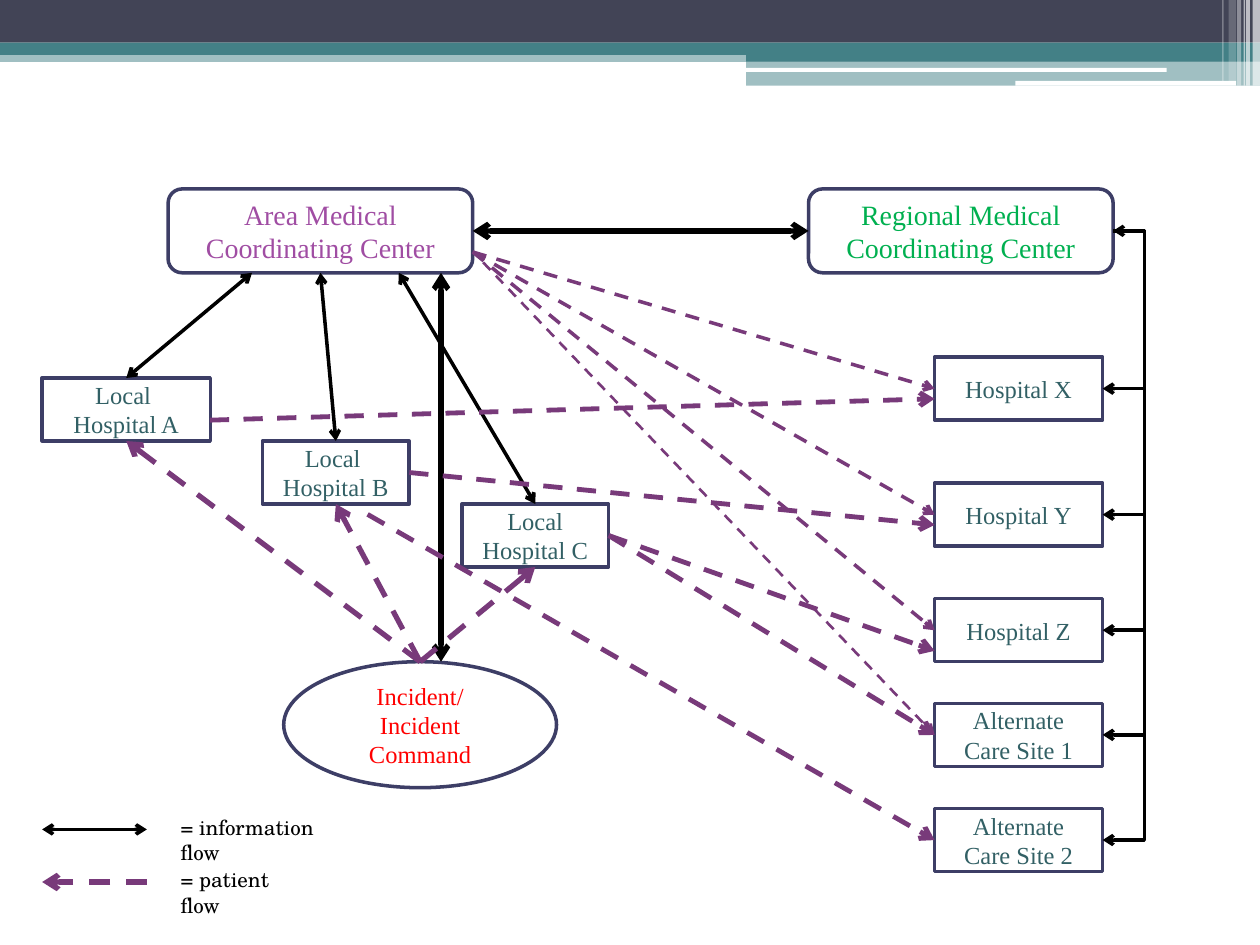
import pptx
import pptx.util
import pptx.dml.color
import pptx.enum.dml
import pptx.enum.shapes
import pptx.enum.text
import pptx.oxml
import pptx.oxml.ns
from lxml import etree

Cm, Pt = pptx.util.Cm, pptx.util.Pt
SHAPE = pptx.enum.shapes.MSO_SHAPE
LINK = pptx.enum.shapes.MSO_CONNECTOR
qn = pptx.oxml.ns.qn

COLORS = {
    "slate": "424456", "teal": "438086", "white": "FFFFFF", "black": "000000",
    "outline": "3D3E66", "hospital": "326065", "incident": "FF0000",
    "area": "A04DA3", "regional": "00B050", "patient": "783A7A",
}
TOP, LEFT, BOTTOM, RIGHT = range(4)

# left, top, width, height, colour, opacity in percent
BANNER = [
    (0, 1.02, 25.4, 0.23, "teal", 50),
    (0, 0, 25.4, 0.86, "slate", 100),
    (0, 0.86, 25.4, 0.25, "teal", 100),
    (15.04, 0.99, 10.36, 0.25, "teal", 100),
    (15.04, 1.22, 10.36, 0.51, "teal", 50),
    (15.01, 1.37, 8.51, 0.08, "white", 100),
    (20.47, 1.63, 4.45, 0.1, "white", 100),
    (25.25, 0, 0.15, 1.73, "white", 65),
    (25.12, 0, 0.08, 1.73, "white", 65),
    (25.07, 0, 0.03, 1.73, "white", 60),
    (24.94, 0, 0.08, 1.73, "white", 40),
    (24.77, 0, 0.15, 1.63, "white", 20),
    (24.64, 0, 0.03, 1.63, "white", 30),
]

# name: text, left, top, width, height, preset, colour, text size
BOX = SHAPE.FLOWCHART_PROCESS
NODES = {
    "A": ("Local \nHospital A", 0.85, 7.62, 3.39, 1.27, BOX, "hospital", 14),
    "B": ("Local \nHospital B", 5.29, 8.89, 2.96, 1.27, BOX, "hospital", 14),
    "C": ("Local Hospital C", 9.31, 10.16, 2.96, 1.27, BOX, "hospital", 14),
    "incident": ("Incident/\nIncident Command", 5.72, 13.34, 5.5, 2.54,
                 SHAPE.OVAL, "incident", 14),
    "area": ("Area Medical Coordinating Center", 3.39, 3.81, 6.14, 1.69,
             SHAPE.ROUNDED_RECTANGLE, "area", 16),
    "regional": ("Regional Medical Coordinating Center", 16.3, 3.81, 6.14, 1.69,
                 SHAPE.ROUNDED_RECTANGLE, "regional", 16),
}
SITES = [("X", "Hospital X", 7.2), ("Y", "Hospital Y", 9.74), ("Z", "Hospital Z", 12.07),
         ("alt1", "Alternate Care Site 1", 14.18), ("alt2", "Alternate Care Site 2", 16.3)]
SITE_LEFT, SITE_WIDTH = 18.84, 3.39
for key, label, top in SITES:
    NODES[key] = (label, SITE_LEFT, top, SITE_WIDTH, 1.27, BOX, "hospital", 14)
BUS_X = 23.07

# An end is (node name, side) or a free point (x, y); then the line width.
AREA_BOTTOM = 5.5
AREA_EXIT = (9.53, 5.08)
INFORMATION = [
    (("A", TOP), (5.08, AREA_BOTTOM), 2),
    ((6.46, AREA_BOTTOM), ("B", TOP), 2),
    (("C", TOP), (8.04, AREA_BOTTOM), 2),
    ((8.89, AREA_BOTTOM), (8.89, 13.34), 3),
    (("regional", LEFT), ("area", RIGHT), 3),
    ((0.85, 16.72), (2.96, 16.72), 2),
]
PATIENT = [
    (("incident", TOP), ("A", BOTTOM), 3),
    (("incident", TOP), ("B", BOTTOM), 3),
    (("incident", TOP), ("C", BOTTOM), 3),
    (AREA_EXIT, ("X", LEFT), 2),
    (AREA_EXIT, ("Y", LEFT), 2),
    (AREA_EXIT, ("Z", LEFT), 2),
    ((9.74, 5.29), ("alt1", LEFT), 1.5),
    ((4.23, 8.47), (SITE_LEFT, 8.04), 2.75),
    (("B", RIGHT), (SITE_LEFT, 10.58), 2.75),
    (("C", RIGHT), (SITE_LEFT, 13.12), 2.75),
    (("C", RIGHT), ("alt1", LEFT), 2.75),
    ((7.41, 10.37), ("alt2", LEFT), 2.75),
    ((2.96, 17.78), (0.85, 17.78), 3),
]
LEGEND = [("= information flow", 16.3, 4.02), ("= patient flow", 17.35, 3.18)]


def rgb(name):
    return pptx.dml.color.RGBColor.from_string(COLORS[name])


def add_text(sp, text, font, size, color, align=None):
    tf = sp.text_frame
    tf.word_wrap = True
    tf.text = text
    for p in tf.paragraphs:
        p.alignment = align
        for r in p.runs:
            r.font.name, r.font.size = font, Pt(size)
            r.font.color.rgb = rgb(color)


def add_shape(s, preset, box, fill):
    sp = s.shapes.add_shape(preset, *map(Cm, box))
    sp.shadow.inherit = False
    sp.fill.solid()
    sp.fill.fore_color.rgb = rgb(fill)
    return sp


def add_band(s, left, top, width, height, color, opacity):
    sp = add_shape(s, SHAPE.RECTANGLE, (left, top, width, height), color)
    sp.line.fill.background()
    if opacity < 100:
        clr = sp.fill._xPr.find(".//" + qn("a:srgbClr"))
        etree.SubElement(clr, qn("a:alpha"), val=str(opacity * 1000))


def add_node(s, text, left, top, width, height, preset, color, size):
    sp = add_shape(s, preset, (left, top, width, height), "white")
    sp.line.color.rgb = rgb("outline")
    sp.line.width = Pt(2)
    sp.text_frame.vertical_anchor = pptx.enum.text.MSO_ANCHOR.MIDDLE
    add_text(sp, text, "Times New Roman", size, color, pptx.enum.text.PP_ALIGN.CENTER)
    return sp


def add_arrow(s, kind, start, end, color, width, both=False):
    c = s.shapes.add_connector(kind, *map(Cm, start + end))
    c.line.color.rgb = rgb(color)
    c.line.width = Pt(width)
    if color == "patient":
        c.line.dash_style = pptx.enum.dml.MSO_LINE.DASH
    ln = c.line._get_or_add_ln()
    for tag in ("a:headEnd", "a:tailEnd") if both else ("a:tailEnd",):
        etree.SubElement(ln, qn(tag), type="arrow")
    etree.SubElement(c._element.spPr, qn("a:effectLst"))
    return c


def add_flow(s, nodes, start, end, color, width, both):
    """Draw a straight arrow, joined to a node at each end that names one."""
    free = [(0, 0) if e[0] in nodes else e for e in (start, end)]
    c = add_arrow(s, LINK.STRAIGHT, *free, color, width, both)
    for e, connect in ((start, c.begin_connect), (end, c.end_connect)):
        if e[0] in nodes:
            connect(nodes[e[0]], e[1])


def add_bus(s):
    """Lead from the regional center down the right margin to every site."""
    _, left, top, width, height = NODES["regional"][:5]
    start = (left + width, top + height / 2)
    end_x = SITE_LEFT + SITE_WIDTH
    bend = (start[0] - BUS_X) / (start[0] - end_x)
    for i, (key, _, site_top) in enumerate(SITES):
        end = (end_x, site_top + NODES[key][4] / 2)
        c = add_arrow(s, LINK.ELBOW, start, end, "black", 2, both=i == 0)
        av = c._element.spPr.find(".//" + qn("a:avLst"))
        etree.SubElement(av, qn("a:gd"), name="adj1", fmla=f"val {round(bend * 100000)}")


def main():
    prs = pptx.Presentation()
    prs.slide_width, prs.slide_height = Cm(25.4), Cm(19.05)
    s = prs.slides.add_slide(prs.slide_layouts[6])
    for band in BANNER:
        add_band(s, *band)
    nodes = {name: add_node(s, *node) for name, node in NODES.items()}
    for flow in INFORMATION:
        add_flow(s, nodes, *flow[:2], "black", flow[2], True)
    add_bus(s)
    for flow in PATIENT:
        add_flow(s, nodes, *flow[:2], "patient", flow[2], False)
    for text, top, width in LEGEND:
        sp = s.shapes.add_textbox(Cm(3.39), Cm(top), Cm(width), Cm(0.76))
        add_text(sp, text, "TeX Gyre Schola", 12, "black")
    prs.save("out.pptx")


if __name__ == "__main__":
    main()
